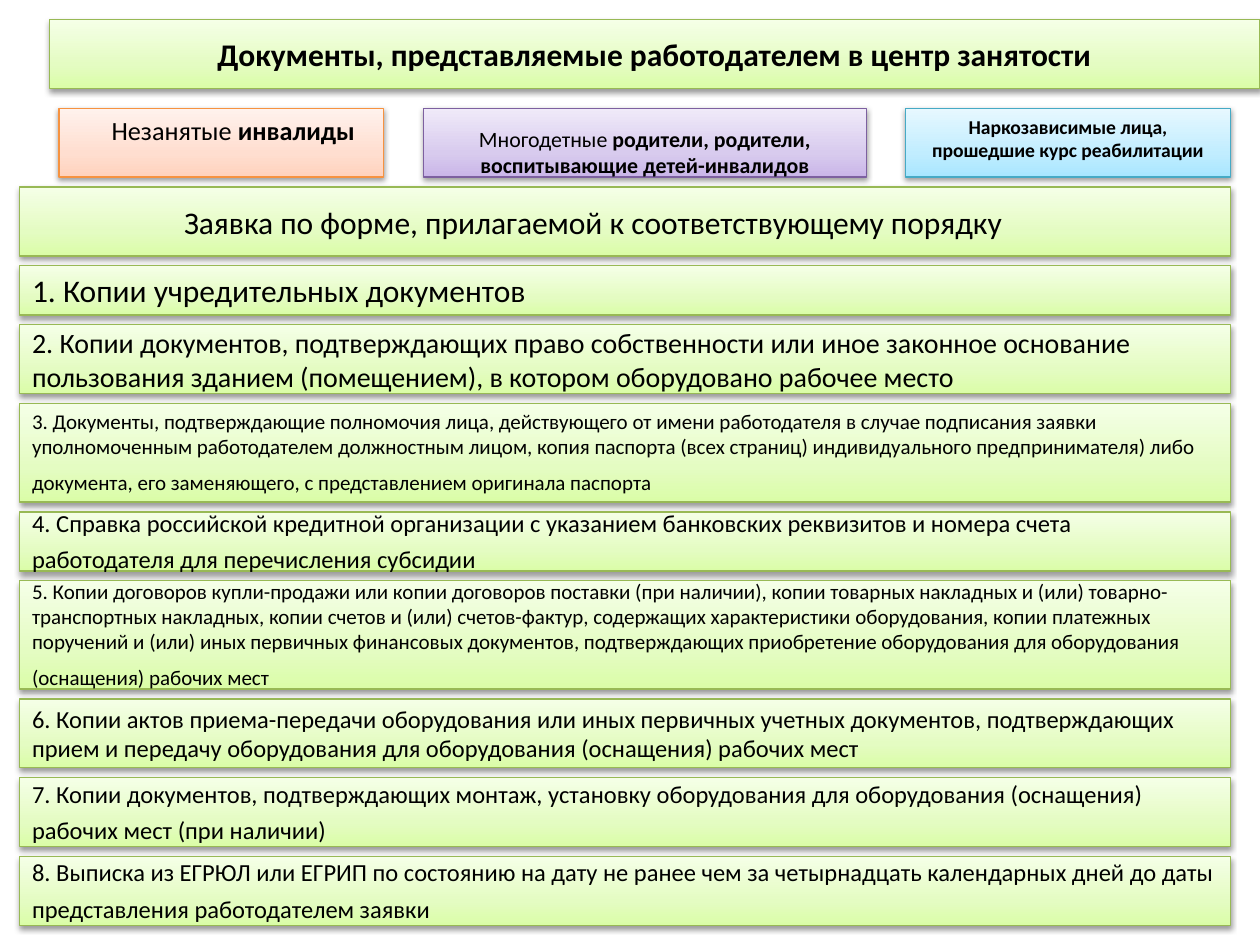
from dataclasses import dataclass
from typing import NamedTuple

import pptx
import pptx.dml.color
import pptx.enum.shapes
import pptx.enum.text
import pptx.oxml
import pptx.oxml.ns
import pptx.util

Cm = pptx.util.Cm
Pt = pptx.util.Pt
RGBColor = pptx.dml.color.RGBColor
Align = pptx.enum.text.PP_ALIGN
Anchor = pptx.enum.text.MSO_ANCHOR

BLACK = RGBColor(0x00, 0x00, 0x00)
FONT = "Calibri"
GRID = 25.4 / 128  # the slide is 128 grid steps wide, in centimetres
BOX_HEIGHT = 7
FULL_WIDTH = 123


class Palette(NamedTuple):
    dark: RGBColor
    middle: RGBColor
    light: RGBColor
    line: RGBColor


GREEN = Palette(RGBColor(0xDA, 0xFD, 0xA7), RGBColor(0xE4, 0xFC, 0xC2),
                RGBColor(0xF5, 0xFF, 0xE7), RGBColor(0x98, 0xB9, 0x55))
ORANGE = Palette(RGBColor(0xFF, 0xD2, 0xBD), RGBColor(0xFF, 0xDE, 0xD0),
                 RGBColor(0xFF, 0xF2, 0xED), RGBColor(0xF6, 0x92, 0x40))
PURPLE = Palette(RGBColor(0xC9, 0xB5, 0xE8), RGBColor(0xD8, 0xCB, 0xEE),
                 RGBColor(0xF0, 0xEA, 0xF9), RGBColor(0x7D, 0x60, 0xA0))
BLUE = Palette(RGBColor(0xA7, 0xE6, 0xFF), RGBColor(0xC1, 0xED, 0xFF),
               RGBColor(0xE7, 0xF8, 0xFF), RGBColor(0x46, 0xAA, 0xC5))


@dataclass
class Category:
    left: int
    width: int
    palette: Palette
    size: float
    plain: str
    bold: str
    margin_left: float = 0.25
    margin_top: float = 0.13


@dataclass
class Document:
    height: int
    size: float
    text: str
    end_size: float = 18  # the closing tab sets the height of the last line
    align: Align = Align.LEFT


TITLE = "Документы, представляемые работодателем в центр занятости"

CATEGORIES = [
    Category(6, 33, ORANGE, 15, "Незанятые ", "инвалиды", margin_left=0.73),
    Category(43, 45, PURPLE, 12.5, "Многодетные ",
             "родители, родители, воспитывающие детей-инвалидов", margin_top=0.34),
    Category(92, 33, BLUE, 11.2, "",
             "Наркозависимые лица, прошедшие курс реабилитации"),
]

DOCUMENTS = [
    Document(7, 18, "Заявка по форме, прилагаемой к соответствующему порядку ",
             align=Align.CENTER),
    Document(5, 18, "1. Копии учредительных документов "),
    Document(7, 16, "2. Копии документов, подтверждающих право собственности или иное "
             "законное основание пользования зданием (помещением), в котором "
             "оборудовано рабочее место ", 16),
    Document(10, 12, "3. Документы, подтверждающие полномочия лица, действующего от имени "
             "работодателя в случае подписания заявки уполномоченным работодателем "
             "должностным лицом, копия паспорта (всех страниц) индивидуального "
             "предпринимателя) либо документа, его заменяющего, с представлением "
             "оригинала паспорта "),
    Document(6, 14, "4. Справка российской кредитной организации с указанием банковских "
             "реквизитов и номера счета работодателя для перечисления субсидии "),
    Document(11, 12, "5. Копии договоров купли-продажи или копии договоров поставки (при "
             "наличии), копии товарных накладных и (или) товарно-транспортных "
             "накладных, копии счетов и (или) счетов-фактур, содержащих "
             "характеристики оборудования, копии платежных поручений и (или) иных "
             "первичных финансовых документов, подтверждающих приобретение "
             "оборудования для оборудования (оснащения) рабочих мест "),
    Document(7, 14, "6. Копии актов приема-передачи оборудования или иных первичных "
             "учетных документов, подтверждающих прием и передачу оборудования для "
             "оборудования (оснащения) рабочих мест ", 14),
    Document(7, 14, "7. Копии документов, подтверждающих монтаж, установку оборудования "
             "для оборудования (оснащения) рабочих мест (при наличии) "),
    Document(7, 14, "8. Выписка из ЕГРЮЛ или ЕГРИП по состоянию на дату не ранее чем за "
             "четырнадцать календарных дней до даты представления работодателем "
             "заявки "),
]


def grid(steps: int) -> pptx.util.Length:
    return Cm(steps * GRID)


def style_box(shape, palette: Palette) -> None:
    """Three-stop gradient, thin outline and a soft shadow below."""
    namespace = pptx.oxml.ns.nsdecls("a")
    colors = zip((0, 35, 100), palette[:3])
    stops = "".join(f'<a:gs pos="{position * 1000}"><a:srgbClr val="{color}"/></a:gs>'
                    for position, color in colors)
    shape.fill.gradient()
    properties = shape.element.spPr
    gradient = properties.find(pptx.oxml.ns.qn("a:gradFill"))
    properties.replace(gradient, pptx.oxml.parse_xml(
        f'<a:gradFill {namespace} rotWithShape="1"><a:gsLst>{stops}</a:gsLst>'
        '<a:lin ang="16200000" scaled="0"/></a:gradFill>'))

    shape.line.color.rgb = palette.line
    shape.line.width = Pt(0.75)

    shape.shadow.inherit = False
    effects = properties.find(pptx.oxml.ns.qn("a:effectLst"))
    effects.append(pptx.oxml.parse_xml(
        f'<a:outerShdw {namespace} blurRad="{Pt(3.1)}" dist="{Pt(1.6)}" dir="5400000" '
        'rotWithShape="0"><a:srgbClr val="000000"><a:alpha val="38000"/></a:srgbClr>'
        '</a:outerShdw>'))


def format_text(shape, size: float, align: Align, anchor: Anchor):
    """Set up the text frame and return its only paragraph."""
    frame = shape.text_frame
    frame.word_wrap = True
    frame.auto_size = pptx.enum.text.MSO_AUTO_SIZE.NONE
    frame.vertical_anchor = anchor
    paragraph = frame.paragraphs[0]
    paragraph.alignment = align
    paragraph.font.name = FONT
    paragraph.font.size = Pt(size)
    paragraph.font.color.rgb = BLACK
    return paragraph


def add_box(slide, left: int, top: int, width: int, height: int, palette: Palette):
    shape = slide.shapes.add_shape(pptx.enum.shapes.MSO_SHAPE.RECTANGLE, grid(left),
                                   grid(top), grid(width), grid(height))
    style_box(shape, palette)
    return shape


def add_category(slide, category: Category, top: int) -> None:
    shape = add_box(slide, category.left, top, category.width, BOX_HEIGHT, category.palette)
    paragraph = format_text(shape, category.size, Align.CENTER, Anchor.TOP)
    shape.text_frame.margin_left = Cm(category.margin_left)
    shape.text_frame.margin_top = Cm(category.margin_top)
    if category.plain:
        paragraph.add_run().text = category.plain
    bold_run = paragraph.add_run()
    bold_run.text = category.bold
    bold_run.font.bold = True


def add_document(slide, document: Document, top: int) -> None:
    shape = add_box(slide, 2, top, FULL_WIDTH, document.height, GREEN)
    paragraph = format_text(shape, document.size, document.align, Anchor.MIDDLE)
    paragraph.add_run().text = document.text
    closing_tab = paragraph.add_run()
    closing_tab.text = "\t"
    closing_tab.font.size = Pt(document.end_size)


def main() -> None:
    presentation = pptx.Presentation()
    presentation.slide_width = Cm(25.4)
    presentation.slide_height = Cm(19.05)
    slide = presentation.slides.add_slide(presentation.slide_layouts[5])

    # Title
    title = slide.shapes.title
    title.left, title.top = grid(5), grid(2)
    title.width, title.height = grid(FULL_WIDTH), grid(BOX_HEIGHT)
    style_box(title, GREEN)
    title.text_frame.text = TITLE
    format_text(title, 18, Align.CENTER, Anchor.MIDDLE).font.bold = True

    # Groups of people
    for category in CATEGORIES:
        add_category(slide, category, 11)

    # Documents, stacked one grid step apart
    top = 19
    for document in DOCUMENTS:
        add_document(slide, document, top)
        top += document.height + 1

    presentation.save("out.pptx")


if __name__ == "__main__":
    main()
